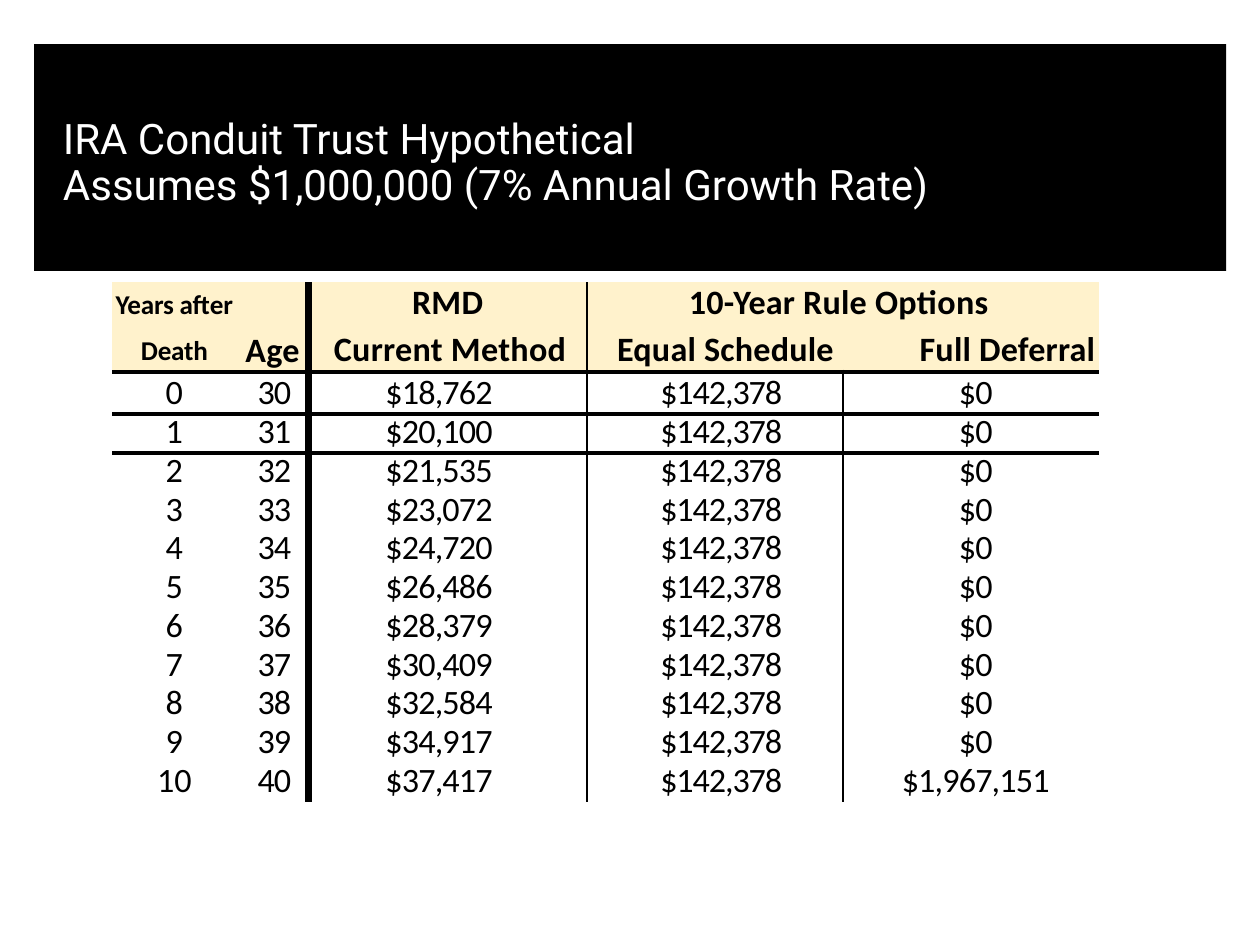
from lxml.etree import SubElement
from pptx import Presentation
from pptx.dml.color import RGBColor
from pptx.enum.shapes import MSO_SHAPE
from pptx.enum.text import MSO_ANCHOR, PP_ALIGN
from pptx.oxml.ns import qn
from pptx.util import Cm, Pt

TITLE = ["IRA Conduit Trust Hypothetical", "Assumes $1,000,000 (7% Annual Growth Rate)"]
RMD = ["$18,762", "$20,100", "$21,535", "$23,072", "$24,720", "$26,486",
       "$28,379", "$30,409", "$32,584", "$34,917", "$37,417"]
EQUAL_PAYMENT = "$142,378"
FIRST_AGE = 30
DEFERRED = ["$0"] * 10 + ["$1,967,151"]
ROWS = [(str(year), str(FIRST_AGE + year), rmd, EQUAL_PAYMENT, deferred)
        for year, (rmd, deferred) in enumerate(zip(RMD, DEFERRED))]

BLACK, WHITE, CREAM = "000000", "FFFFFF", "FFF2CC"
COLUMN_WIDTHS = [2.51, 1.45, 5.61, 5.16, 5.16]
ROW_HEIGHTS = [1.8, 0.86] + [0.78] * 10
COLUMN_LINES = {1: 3.98, 2: 1.33, 3: 1.33}  # points, right of the column
ROW_LINES = {0: 2.65, 1: 2.65}  # points, below the row

# alignment, left margin, right margin, letter spacing in points
BODY_STYLES = [
    (PP_ALIGN.CENTER, 0, 0, 0),
    (PP_ALIGN.CENTER, 0.08, 0, -0.6),
    (PP_ALIGN.LEFT, 1.55, 0, -0.5),
    (PP_ALIGN.RIGHT, 0, 1.22, -0.66),
    (PP_ALIGN.CENTER, 0.2, 0, -0.5),
]
# lines as (text, left indent), alignment, size, space between lines, spacing
HEADERS = [
    ([("Years after", 0), ("Death", 0)], PP_ALIGN.CENTER, 15.5, 7.2, -0.1),
    ([("Age", 0)], PP_ALIGN.CENTER, 19.5, 0, 0.1),
    ([("RMD", 0), ("Current Method", 0.1)], PP_ALIGN.CENTER, 19.5, 3, 0.15),
    ([("10-Year Rule Options", 2.06), ("Equal Schedule\tFull Deferral", 0.61)],
     PP_ALIGN.LEFT, 19.5, 3, 0.1),
]
DEFERRAL_TAB = 6.1


def color(hex_string):
    return RGBColor.from_string(hex_string)


def draw_borders(cell, row, column):
    column_lines = {1: COLUMN_LINES[1], 2: COLUMN_LINES[2]} if row == 0 else COLUMN_LINES
    widths = {"a:lnL": column_lines.get(column - 1), "a:lnR": column_lines.get(column),
              "a:lnT": ROW_LINES.get(row - 1), "a:lnB": ROW_LINES.get(row)}
    properties = cell._tc.get_or_add_tcPr()
    for tag, width in widths.items():
        if width:
            line = SubElement(properties, qn(tag), w=str(int(Pt(width))))
            fill = SubElement(line, qn("a:solidFill"))
            SubElement(fill, qn("a:srgbClr"), val=BLACK)


def write_paragraph(paragraph, text, alignment, size, spacing, bold=False):
    run = paragraph.add_run()
    run.text = text
    run._r.get_or_add_rPr().set("spc", str(round(spacing * 100)))
    paragraph.alignment = alignment
    paragraph.font.name = "Calibri"
    paragraph.font.size = Pt(size)
    paragraph.font.bold = bold
    paragraph.font.color.rgb = color(BLACK)


def write_header(cell, lines, alignment, size, gap, spacing):
    frame = cell.text_frame
    for index, (text, indent) in enumerate(lines):
        paragraph = frame.add_paragraph() if index else frame.paragraphs[0]
        if index:
            paragraph.space_before = Pt(gap)
        properties = paragraph._p.get_or_add_pPr()
        properties.set("marL", str(int(Cm(indent))))
        if "\t" in text:
            tabs = SubElement(properties, qn("a:tabLst"))
            SubElement(tabs, qn("a:tab"), pos=str(int(Cm(DEFERRAL_TAB))), algn="l")
        write_paragraph(paragraph, text, alignment, size, spacing, bold=True)


def add_title(slide):
    band = slide.shapes.add_shape(MSO_SHAPE.RECTANGLE, Cm(0.69), Cm(0.89), Cm(24.03), Cm(4.57))
    band.shadow.inherit = False
    band.fill.solid()
    band.fill.fore_color.rgb = color(BLACK)
    band.line.fill.background()

    title = slide.shapes.add_textbox(Cm(1.02), Cm(1.4), Cm(22), Cm(3.81))
    frame = title.text_frame
    frame.word_wrap = True
    frame.vertical_anchor = MSO_ANCHOR.MIDDLE
    paragraph = frame.paragraphs[0]
    paragraph.text = "\v".join(TITLE)
    paragraph.line_spacing = 0.9
    paragraph.font.name = "Roboto"
    paragraph.font.size = Pt(24)
    paragraph.font.color.rgb = color(WHITE)


def add_payout_table(slide):
    frame = slide.shapes.add_table(len(ROW_HEIGHTS), len(COLUMN_WIDTHS), Cm(2.26), Cm(5.69),
                                   Cm(sum(COLUMN_WIDTHS)), Cm(sum(ROW_HEIGHTS)))
    table = frame.table
    table.first_row = table.horz_banding = False
    # "No Style, No Grid"
    table._tbl.tblPr.find(qn("a:tableStyleId")).text = "{2D5ABB26-0587-4C30-8999-92F81FD0307C}"
    for column, width in zip(table.columns, COLUMN_WIDTHS):
        column.width = Cm(width)
    for row_index, (row, height) in enumerate(zip(table.rows, ROW_HEIGHTS)):
        row.height = Cm(height)
        for column_index, cell in enumerate(row.cells):
            cell.margin_left = cell.margin_right = cell.margin_top = cell.margin_bottom = 0
            draw_borders(cell, row_index, column_index)
            if row_index == 0:
                cell.fill.solid()
                cell.fill.fore_color.rgb = color(CREAM)
                continue
            cell.fill.background()
            alignment, left, right, spacing = BODY_STYLES[column_index]
            cell.margin_left, cell.margin_right = Cm(left), Cm(right)
            paragraph = cell.text_frame.paragraphs[0]
            if row_index > 1:
                paragraph.line_spacing = Pt(22.1)
            write_paragraph(paragraph, ROWS[row_index - 1][column_index],
                            alignment, 19.5, spacing)

    table.cell(0, 3).merge(table.cell(0, 4))
    for column_index, header in enumerate(HEADERS):
        write_header(table.cell(0, column_index), *header)
    table.cell(0, 0).margin_top = Cm(0.13)
    table.cell(0, 1).vertical_anchor = MSO_ANCHOR.BOTTOM


def main():
    presentation = Presentation()
    presentation.slide_width, presentation.slide_height = Cm(25.4), Cm(19.05)
    slide = presentation.slides.add_slide(presentation.slide_layouts[6])
    add_title(slide)
    add_payout_table(slide)
    presentation.save("out.pptx")


if __name__ == "__main__":
    main()
